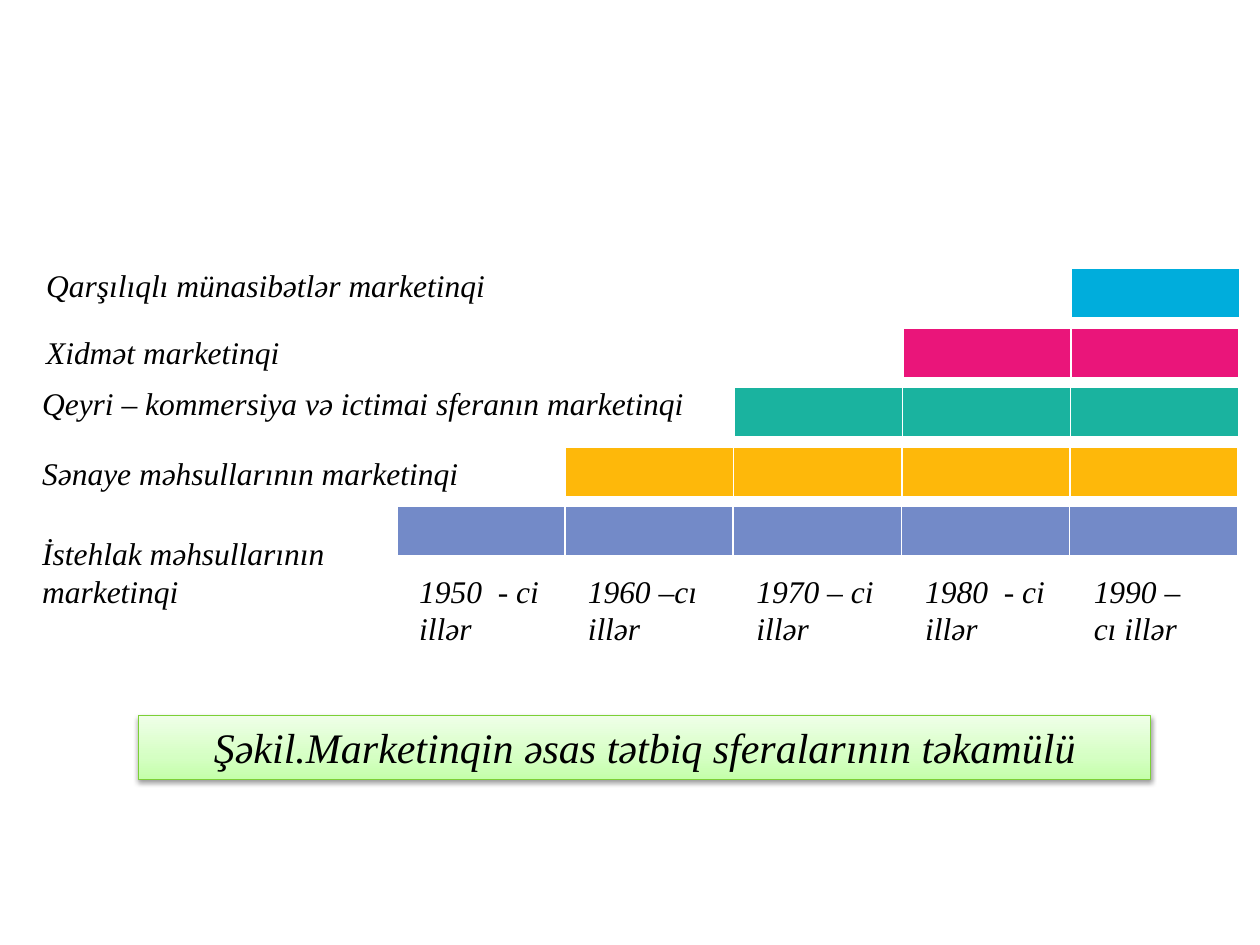
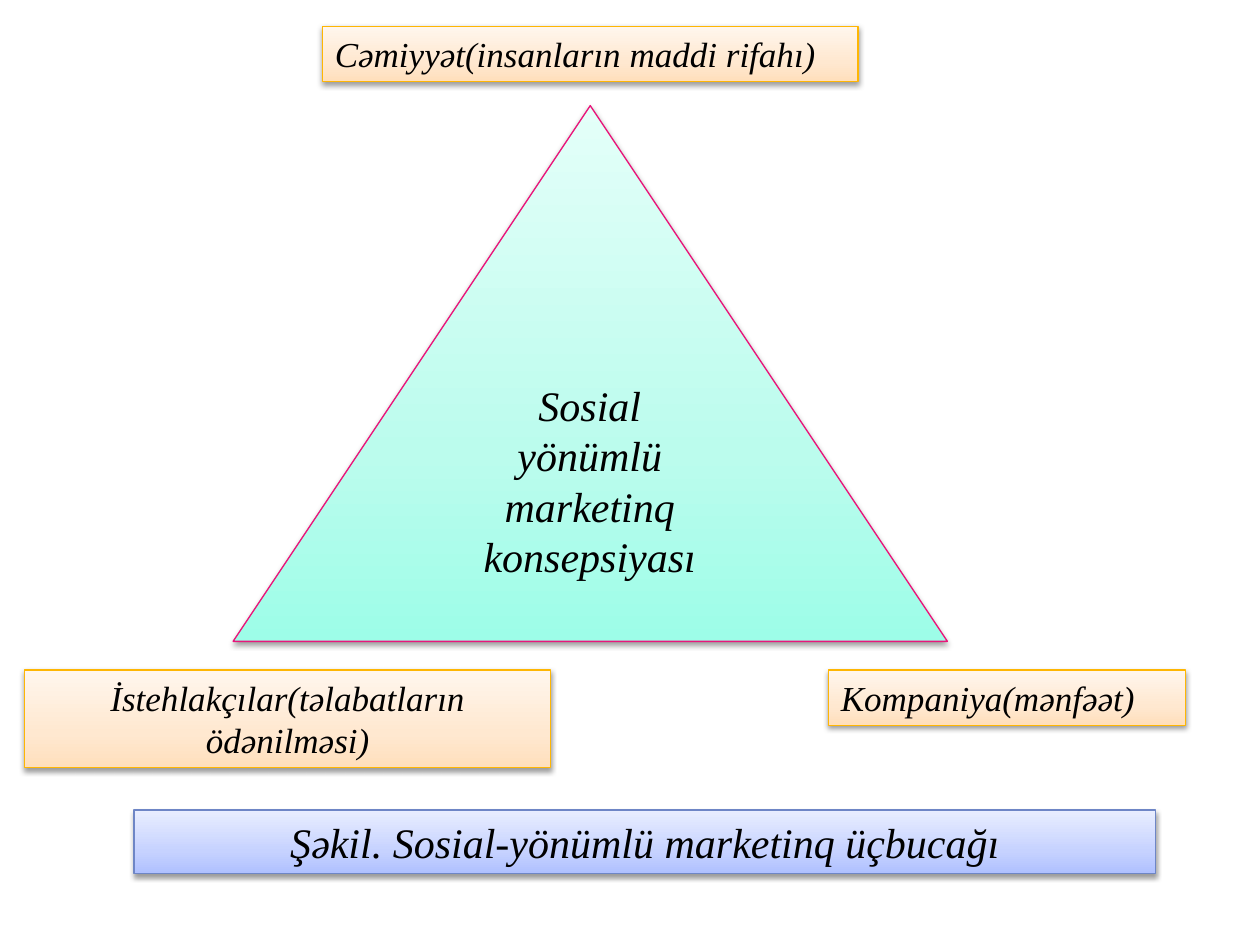
from lxml.etree import SubElement
from pptx import Presentation
from pptx.dml.color import RGBColor
from pptx.enum.shapes import MSO_SHAPE as Preset
from pptx.enum.text import MSO_ANCHOR as Anchor, MSO_AUTO_SIZE as AutoSize, PP_ALIGN as Align
from pptx.oxml.ns import qn
from pptx.util import Cm, Pt

FONT = "Times New Roman"
BLACK = "000000"
WHITE = "FFFFFF"

# Line colour, then gradient colours from bottom to top
GREEN = ("7CD036", ("C4FFAA", "D5FFC3", "EFFFE8"))
MINT = ("EA157A", ("9DFDE8", "BBFCED", "E4FFF9"))
ORANGE = ("FEB604", ("FFDFBC", "FFE8D0", "FFF6ED"))
BLUE = ("6E86C6", ("B0C1FF", "C6D2FF", "E9EEFF"))
GRADIENT_POSITIONS = (0, 35, 100)

# Slide 1: one bar per sphere, bottom to top, each starting one decade later
DECADES = ["1950  - ci illər", "1960 –cı illər", "1970 – ci illər",
           "1980  - ci illər", "1990 – cı illər"]
BAR_COLORS = ["738AC8", "FEB80A", "1AB39F", "EA157A", "00ADDC"]
BAR_LEFT, BAR_TOP = 8.0, 10.21
DECADE_STEP, BAR_STEP = 3.4, 1.2
CELL_WIDTH, CELL_HEIGHT = 3.39, 1.03
DECADE_TOP, DECADE_INDENT = 11.4, 0.2
DECADE_WIDTHS = [3.0, 3.0, 3.0, 3.0, 2.8]
SPHERES = [  # text, (left, top, width, height) in cm
    ("İstehlak məhsullarının marketinqi", (0.6, 10.64, 7.2, 1.8)),
    ("Sənaye məhsullarının marketinqi", (0.6, 9.02, 10.1, 1.03)),
    ("Qeyri – kommersiya və ictimai sferanın marketinqi", (0.6, 7.62, 14.0, 1.03)),
    ("Xidmət marketinqi", (0.68, 6.59, 17.4, 1.03)),
    ("Qarşılıqlı münasibətlər marketinqi", (0.68, 5.24, 9.72, 1.03)),
]
EVOLUTION_CAPTION = ("Şəkil.Marketinqin əsas tətbiq sferalarının təkamülü",
                     (2.8, 14.43, 20.4, 1.28))

# Slide 2
TRIANGLE_BOX = (4.7, 2.13, 14.4, 10.8)
CONCEPT = ("Sosial yönümlü marketinq konsepsiyası", (9.1, 7.52, 5.58, 4.37))
CORNERS = [
    ("Cəmiyyət(insanların maddi rifahı)", (6.5, 0.53, 10.8, 1.11), Align.LEFT),
    ("Kompaniya(mənfəət)", (16.7, 13.51, 7.2, 1.11), Align.LEFT),
    ("İstehlakçılar(təlabatların ödənilməsi)", (0.5, 13.51, 10.6, 1.97), Align.CENTER),
]
TRIANGLE_CAPTION = ("Şəkil. Sosial-yönümlü marketinq üçbucağı",
                    (2.7, 16.33, 20.6, 1.28))


def rgb(color):
    return RGBColor.from_string(color)


def lengths(box):
    return [Cm(value) for value in box]


def add_color(parent, color):
    return SubElement(parent, qn("a:srgbClr"), val=color)


def write(shape, text, size, align):
    frame = shape.text_frame
    frame.word_wrap = True
    frame.auto_size = AutoSize.SHAPE_TO_FIT_TEXT
    frame.vertical_anchor = Anchor.TOP
    paragraph = frame.paragraphs[0]
    paragraph.alignment = align
    run = paragraph.add_run()
    run.text = text
    run.font.name = FONT
    run.font.size = Pt(size)
    run.font.italic = True
    run.font.color.rgb = rgb(BLACK)


def add_label(slide, text, box, size=18, align=Align.LEFT):
    write(slide.shapes.add_textbox(*lengths(box)), text, size, align)


def add_glossy_shape(slide, preset, box, style):
    """Add a shape with a vertical gradient, a thin line and a soft shadow below."""
    line_color, gradient_colors = style
    shape = slide.shapes.add_shape(preset, *lengths(box))
    shape.line.color.rgb = rgb(line_color)
    shape.line.width = Pt(0.75)

    shape.fill.gradient()
    shape.fill.gradient_angle = 90
    properties = shape.element.spPr
    stops = properties.find(qn("a:gradFill")).find(qn("a:gsLst"))
    for stop in list(stops):
        stops.remove(stop)
    for position, color in zip(GRADIENT_POSITIONS, gradient_colors):
        add_color(SubElement(stops, qn("a:gs"), pos=str(position * 1000)), color)

    shape.shadow.inherit = False
    shadow = SubElement(properties.find(qn("a:effectLst")), qn("a:outerShdw"),
                        blurRad=str(Pt(3.1)), dist=str(Pt(1.6)),
                        dir="5400000", rotWithShape="0")
    SubElement(add_color(shadow, BLACK), qn("a:alpha"), val="38000")
    return shape


def add_panel(slide, text, box, style, size=24, align=Align.CENTER):
    write(add_glossy_shape(slide, Preset.RECTANGLE, box, style), text, size, align)


def style_cell(cell, color):
    properties = cell._tc.get_or_add_tcPr()
    for side, width in (("L", 1), ("R", 1), ("T", 1), ("B", 3)):
        border = SubElement(properties, qn(f"a:ln{side}"), w=str(Pt(width)))
        add_color(SubElement(border, qn("a:solidFill")), WHITE)
    cell.fill.solid()
    cell.fill.fore_color.rgb = rgb(color)


def add_bar(slide, start, color):
    """Add a one-row table that runs from decade number start to the last one."""
    count = len(DECADES) - start
    box = (BAR_LEFT + start * DECADE_STEP, BAR_TOP - start * BAR_STEP,
           count * CELL_WIDTH, CELL_HEIGHT)
    table = slide.shapes.add_table(1, count, *lengths(box)).table
    table.first_row = table.horz_banding = False
    for cell in table.iter_cells():
        style_cell(cell, color)


def build_evolution(slide):
    for start, color in enumerate(BAR_COLORS):
        add_bar(slide, start, color)
    for index, (decade, width) in enumerate(zip(DECADES, DECADE_WIDTHS)):
        left = BAR_LEFT + DECADE_INDENT + index * DECADE_STEP
        add_label(slide, decade, (left, DECADE_TOP, width, 1.8))
    for text, box in SPHERES:
        add_label(slide, text, box)
    add_panel(slide, *EVOLUTION_CAPTION, GREEN)


def build_triangle(slide):
    add_glossy_shape(slide, Preset.ISOSCELES_TRIANGLE, TRIANGLE_BOX, MINT)
    add_label(slide, *CONCEPT, size=24, align=Align.CENTER)
    for text, box, align in CORNERS:
        add_panel(slide, text, box, ORANGE, 20, align)
    add_panel(slide, *TRIANGLE_CAPTION, BLUE)


def main():
    presentation = Presentation()
    presentation.slide_width, presentation.slide_height = Cm(25.4), Cm(19.05)
    blank = presentation.slide_layouts[6]
    for build in (build_evolution, build_triangle):
        build(presentation.slides.add_slide(blank))
    presentation.save("out.pptx")


if __name__ == "__main__":
    main()
